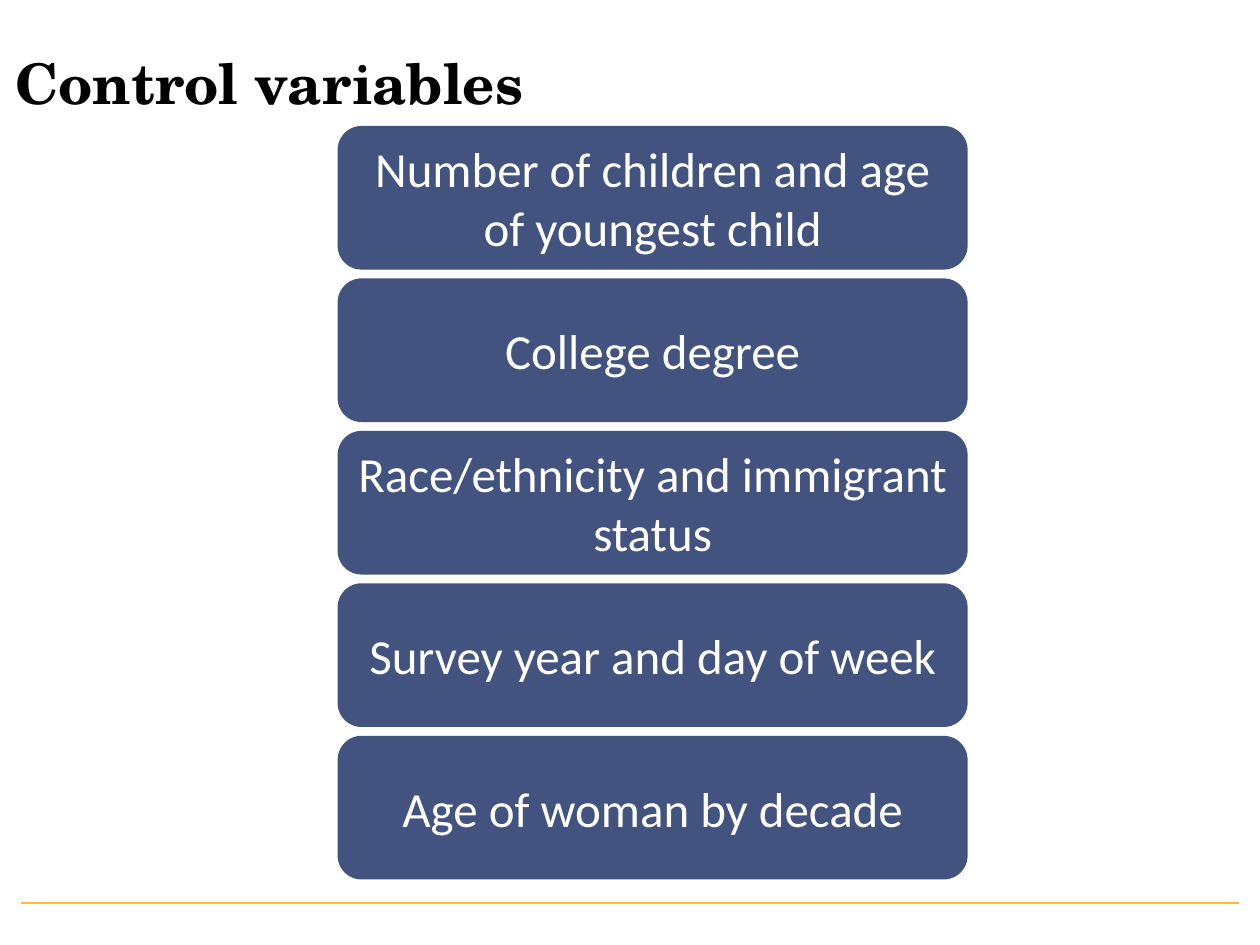
from dataclasses import dataclass

from lxml import etree
from pptx import Presentation
from pptx.dml.color import RGBColor
from pptx.enum.shapes import MSO_CONNECTOR, MSO_SHAPE
from pptx.enum.text import MSO_ANCHOR, PP_ALIGN
from pptx.oxml.ns import qn
from pptx.util import Inches, Pt

STRAIGHT = MSO_CONNECTOR.STRAIGHT
ROUNDED = MSO_SHAPE.ROUNDED_RECTANGLE
MIDDLE = MSO_ANCHOR.MIDDLE
LEFT, CENTER = PP_ALIGN.LEFT, PP_ALIGN.CENTER
TITLE_ONLY = 5


@dataclass(frozen=True)
class Theme:
    ink: RGBColor = RGBColor(0x00, 0x00, 0x00)
    card: RGBColor = RGBColor(0x42, 0x53, 0x7F)
    card_text: RGBColor = RGBColor(0xFF, 0xFF, 0xFF)
    rule: RGBColor = RGBColor(0xFE, 0xBB, 0x36)
    title_font: str = "TeX Gyre Schola"
    card_font: str = "Calibri"
    title_size: int = 32
    card_size: int = 28
    rule_width: float = 1.25


@dataclass(frozen=True)
class Stack:
    """A column of equal cards, in inches."""
    left: float
    top: float
    width: float
    height: float
    pitch: float


THEME = Theme()
SLIDE_WIDTH, SLIDE_HEIGHT = 10, 7.5
CARDS = Stack(left=2.68, top=1, width=5, height=1.14, pitch=1.21)
RULE_MARGIN, RULE_Y = 0.17, 7.17
VARIABLES = (
    "Number of children and age of youngest child",
    "College degree",
    "Race/ethnicity and immigrant status",
    "Survey year and day of week",
    "Age of woman by decade",
)


def write(shape, text: str, align, color: RGBColor, font: dict) -> None:
    frame = shape.text_frame
    frame.text = text
    frame_format = {
        "word_wrap": True, "vertical_anchor": MIDDLE,
        "margin_left": Inches(0.1), "margin_right": Inches(0.1),
        "margin_top": Inches(0.05), "margin_bottom": Inches(0.05),
    }
    for name, value in frame_format.items():
        setattr(frame, name, value)
    paragraph = frame.paragraphs[0]
    paragraph.alignment = align
    run_font = paragraph.runs[0].font
    for name, value in font.items():
        setattr(run_font, name, value)
    run_font.color.rgb = color


def add_rule(slide) -> None:
    rule = slide.shapes.add_connector(
        STRAIGHT, Inches(SLIDE_WIDTH - RULE_MARGIN), Inches(RULE_Y),
        Inches(RULE_MARGIN), Inches(RULE_Y))
    rule.line.color.rgb = THEME.rule
    rule.line.width = Pt(THEME.rule_width)
    etree.SubElement(rule._element.spPr, qn("a:effectLst"))


def place_title(slide, text: str) -> None:
    title = slide.shapes.title
    box = {"left": 0.02, "top": 0.03, "width": 9, "height": 1.25}
    for name, value in box.items():
        setattr(title, name, Inches(value))
    write(title, text, LEFT, THEME.ink, {
        "name": THEME.title_font, "size": Pt(THEME.title_size), "bold": True})


def add_card(slide, row: int, text: str) -> None:
    card = slide.shapes.add_shape(
        ROUNDED, Inches(CARDS.left), Inches(CARDS.top + row * CARDS.pitch),
        Inches(CARDS.width), Inches(CARDS.height))
    card.shadow.inherit = False
    card.fill.solid()
    card.fill.fore_color.rgb = THEME.card
    card.line.fill.background()
    write(card, text, CENTER, THEME.card_text, {
        "name": THEME.card_font, "size": Pt(THEME.card_size)})


def main() -> None:
    deck = Presentation()
    deck.slide_width, deck.slide_height = Inches(SLIDE_WIDTH), Inches(SLIDE_HEIGHT)
    slide = deck.slides.add_slide(deck.slide_layouts[TITLE_ONLY])

    # Footer rule and title
    add_rule(slide)
    place_title(slide, "Control variables")

    # One card for each control variable
    for row, variable in enumerate(VARIABLES):
        add_card(slide, row, variable)

    deck.save("out.pptx")


if __name__ == "__main__":
    main()
